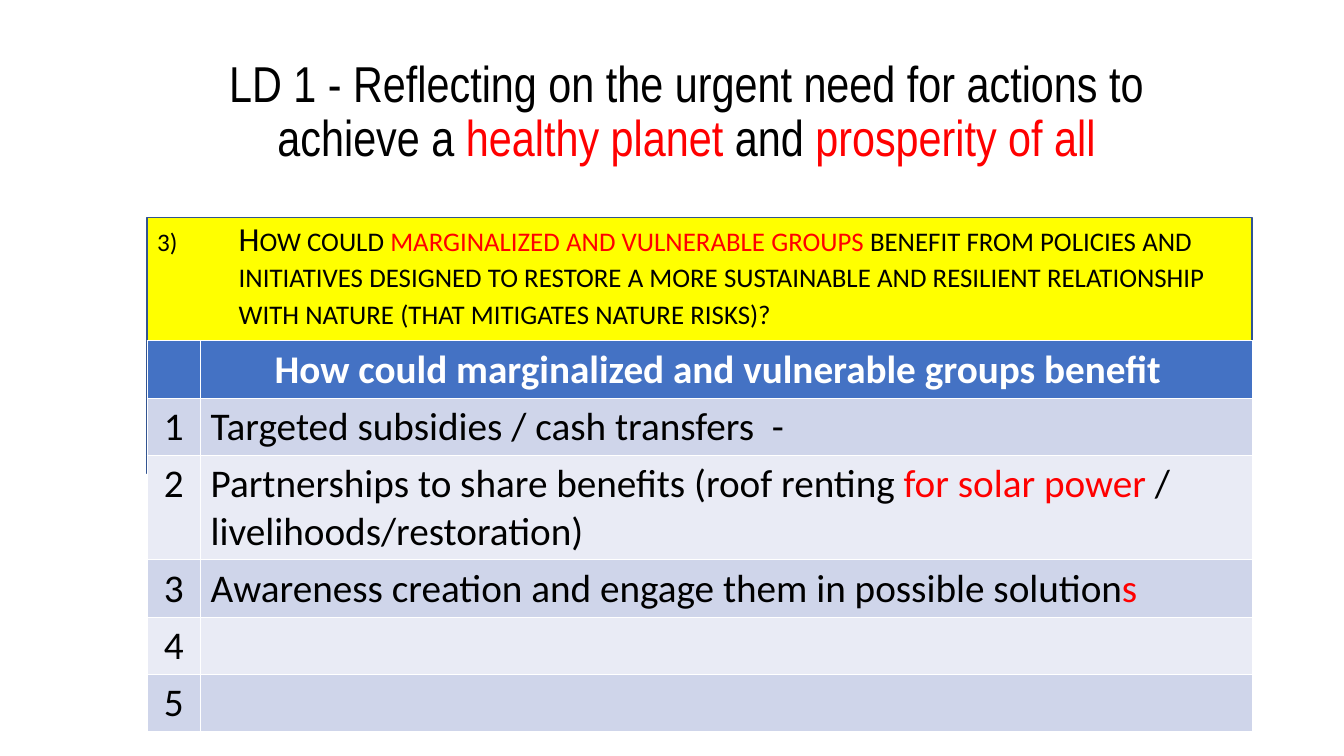
from lxml.etree import SubElement
from pptx import Presentation
from pptx.dml.color import RGBColor
from pptx.enum.shapes import MSO_SHAPE
from pptx.enum.text import MSO_ANCHOR, PP_ALIGN
from pptx.oxml.ns import qn
from pptx.util import Inches, Pt

BLACK = RGBColor(0x00, 0x00, 0x00)
WHITE = RGBColor(0xFF, 0xFF, 0xFF)
RED = RGBColor(0xFF, 0x00, 0x00)
YELLOW = RGBColor(0xFF, 0xFF, 0x00)
FRAME_BLUE = RGBColor(0x32, 0x54, 0x91)
HEADER_BLUE = RGBColor(0x44, 0x72, 0xC4)
BANDS = RGBColor(0xCF, 0xD5, 0xEA), RGBColor(0xE9, 0xEB, 0xF5)

TITLE = [
    ("LD 1 - Reflecting on the urgent need for actions to achieve a ", BLACK),
    ("healthy planet", RED),
    (" and ", BLACK),
    ("prosperity of all", RED),
]
QUESTION = [
    ("How could ", BLACK),
    ("marginalized and vulnerable groups ", RED),
    ("benefit from policies and initiatives designed to restore a more "
     "sustainable and resilient relationship with nature "
     "(that mitigates nature risks)?", BLACK),
]
HEADER = [("How could marginalized and vulnerable groups benefit  ", WHITE)]
ANSWERS = [
    [("Targeted subsidies / cash transfers  -", BLACK)],
    [("Partnerships to share benefits (roof renting ", BLACK),
     ("for solar power ", RED),
     ("/ livelihoods/restoration)", BLACK)],
    [("Awareness creation and engage them in possible solution", BLACK),
     ("s", RED)],
    [],
    [],
]


def write(paragraph, pieces, font_name, size, align=PP_ALIGN.LEFT, bold=False):
    """Fill a paragraph with (text, colour) pieces in one font."""
    paragraph.alignment = align
    paragraph.font.name = font_name
    paragraph.font.size = Pt(size)
    paragraph.font.bold = bold
    for text, colour in pieces:
        run = paragraph.add_run()
        run.text = text
        run.font.color.rgb = colour


def add_title(slide, left, top, width, height):
    frame = slide.shapes.add_textbox(left, top, width, height).text_frame
    frame.word_wrap = True
    frame.vertical_anchor = MSO_ANCHOR.MIDDLE
    heading = frame.paragraphs[0]
    heading.line_spacing = 0.9
    write(heading, TITLE, "Arial Narrow", 36, PP_ALIGN.CENTER)


def number_paragraph(paragraph, start, indent):
    """Give a paragraph a hanging number such as 3)."""
    properties = paragraph._p.get_or_add_pPr()
    properties.set("marL", str(indent))
    properties.set("indent", str(-indent))
    SubElement(properties, qn("a:buSzPct"), val="75000")
    SubElement(properties, qn("a:buAutoNum"), type="arabicParenR", startAt=str(start))


def add_question(slide, left, top, width, height):
    panel = slide.shapes.add_shape(MSO_SHAPE.RECTANGLE, left, top, width, height)
    panel.shadow.inherit = False
    panel.fill.solid()
    panel.fill.fore_color.rgb = YELLOW
    panel.line.color.rgb = FRAME_BLUE
    panel.line.width = Pt(1)
    frame = panel.text_frame
    frame.word_wrap = True
    frame.vertical_anchor = MSO_ANCHOR.TOP
    question = frame.paragraphs[0]
    number_paragraph(question, 3, Inches(0.81))
    question.line_spacing = 0.9
    question.space_before = Pt(10)
    write(question, QUESTION, "Calibri", 24)
    for run in question.runs:
        run.font._element.set("cap", "small")


def add_answers(slide, left, top, width, row_height):
    rows = [([], HEADER)]
    rows += [([(str(number), BLACK)], answer)
             for number, answer in enumerate(ANSWERS, 1)]
    table = slide.shapes.add_table(
        len(rows), 2, left, top, width, row_height * len(rows)).table
    number_width = Inches(0.53)
    table.columns[0].width = number_width
    table.columns[1].width = width - number_width
    for r, row in enumerate(rows):
        for c, pieces in enumerate(row):
            cell = table.cell(r, c)
            cell.fill.solid()
            cell.fill.fore_color.rgb = BANDS[(r - 1) % 2] if r else HEADER_BLUE
            centred = r == 0 or c == 0
            write(cell.text_frame.paragraphs[0], pieces, "Calibri", 28,
                  PP_ALIGN.CENTER if centred else PP_ALIGN.LEFT, bold=r == 0)


def main():
    deck = Presentation()
    deck.slide_width, deck.slide_height = Inches(13.33), Inches(7.5)
    slide = deck.slides.add_slide(deck.slide_layouts[6])
    left, width = Inches(1.46), Inches(10.96)
    add_question(slide, left, Inches(2.16), width, Inches(2.54))
    add_title(slide, left, Inches(0.4), Inches(10.7), Inches(1.45))
    add_answers(slide, left, Inches(3.38), width, Inches(0.57))
    deck.save("out.pptx")


if __name__ == "__main__":
    main()
